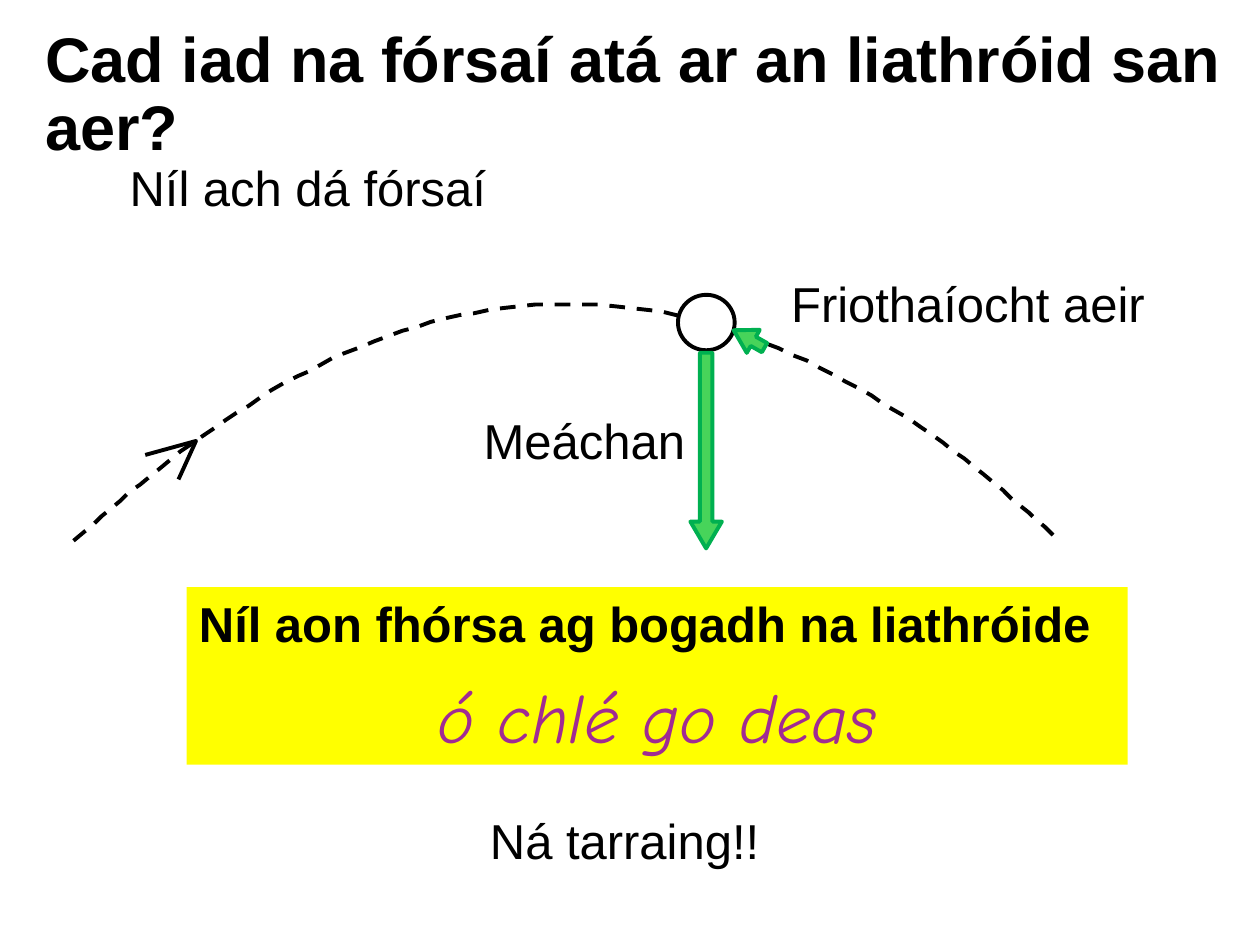
from dataclasses import dataclass

from pptx import Presentation
from pptx.dml.color import RGBColor
from pptx.enum.dml import MSO_LINE
from pptx.enum.shapes import MSO_SHAPE
from pptx.enum.text import MSO_ANCHOR, PP_ALIGN
from pptx.util import Pt

BLACK = RGBColor(0x00, 0x00, 0x00)
WHITE = RGBColor(0xFF, 0xFF, 0xFF)
YELLOW = RGBColor(0xFF, 0xFF, 0x00)
PURPLE = RGBColor(0xA0, 0x2B, 0x93)
GREEN = RGBColor(0x47, 0xD4, 0x5A)
DARK_GREEN = RGBColor(0x00, 0xB0, 0x50)
LINE_WIDTH = Pt(2.25)
CURVE_STEPS = 40

Point = tuple[float, float]


@dataclass
class Box:
    left: float
    top: float
    width: float
    height: float

    def place(self):
        return Pt(self.left), Pt(self.top), Pt(self.width), Pt(self.height)


@dataclass
class Label:
    text: str
    box: Box


@dataclass
class Force:
    box: Box
    rotation: float


LABELS = [
    Label("Meáchan", Box(269.3, 231.1, 131, 41.2)),
    Label("Friothaíocht aeir", Box(445, 152.6, 219.6, 41.2)),
    Label("Níl ach dá fórsaí", Box(67, 86.4, 220.3, 41.2)),
    Label("Ná tarraing!!", Box(272.9, 459.4, 179.3, 41.2)),
]
FORCES = [
    Force(Box(394.5, 201.6, 18, 111.8), 0),
    Force(Box(420.5, 183.6, 15.1, 20.2), 119.5),
]
FLIGHT = [
    ((42.5, 308.9), (108.7, 249.8), (202.3, 174.2), (324, 173.5)),
    ((324, 173.5), (445, 172.1), (554.4, 259.2), (604.8, 313.9)),
]
FLIGHT_END = (604.8, 309.2)
DIRECTION = [(82.8, 260), (112, 251.6), (101.5, 273.6)]


def style_font(p, size: float, color=BLACK, name="Arial", bold=False, italic=False):
    for r in p.runs:
        r.font.name = name
        r.font.size = Pt(size)
        r.font.color.rgb = color
        r.font.bold = bold
        r.font.italic = italic


def cubic(a: Point, b: Point, c: Point, d: Point, t: float) -> Point:
    u = 1 - t
    return tuple(
        u**3 * p0 + 3 * u * u * t * p1 + 3 * u * t * t * p2 + t**3 * p3
        for p0, p1, p2, p3 in zip(a, b, c, d)
    )


def add_path(slide, points: list[Point], dashed=False):
    fb = slide.shapes.build_freeform(*points[0], scale=12700)
    fb.add_line_segments(points[1:], close=False)
    sp = fb.convert_to_shape()
    sp.shadow.inherit = False
    sp.fill.background()
    sp.line.color.rgb = BLACK
    sp.line.width = LINE_WIDTH
    if dashed:
        sp.line.dash_style = MSO_LINE.DASH


def add_solid(slide, kind, box: Box, fill: RGBColor, line=None):
    sp = slide.shapes.add_shape(kind, *box.place())
    sp.shadow.inherit = False
    sp.fill.solid()
    sp.fill.fore_color.rgb = fill
    if line is None:
        sp.line.fill.background()
    else:
        sp.line.color.rgb = line
        sp.line.width = LINE_WIDTH
    return sp


def add_title(slide, text: str, box: Box):
    sp = slide.shapes.title
    sp.left, sp.top, sp.width, sp.height = box.place()
    tf = sp.text_frame
    tf.text = text
    tf.word_wrap = True
    tf.vertical_anchor = MSO_ANCHOR.MIDDLE
    p = tf.paragraphs[0]
    p.alignment = PP_ALIGN.LEFT
    p.line_spacing = 0.9
    style_font(p, 36, bold=True)


def add_force(slide, force: Force):
    sp = add_solid(slide, MSO_SHAPE.DOWN_ARROW, force.box, GREEN, DARK_GREEN)
    sp.adjustments[0] = 0.4
    sp.adjustments[1] = 0.85
    sp.rotation = force.rotation


def add_label(slide, label: Label):
    tf = slide.shapes.add_textbox(*label.box.place()).text_frame
    tf.word_wrap = True
    tf.text = label.text
    p = tf.paragraphs[0]
    p.space_after = Pt(12)
    style_font(p, 28)


def add_conclusion(slide, box: Box):
    tf = add_solid(slide, MSO_SHAPE.RECTANGLE, box, YELLOW).text_frame
    tf.word_wrap = True
    tf.vertical_anchor = MSO_ANCHOR.TOP
    tf.text = "Níl aon fhórsa ag bogadh na liathróide\nó chlé go deas"
    first, second = tf.paragraphs
    first.alignment = PP_ALIGN.LEFT
    second.alignment = PP_ALIGN.CENTER
    for p in tf.paragraphs:
        p.space_after = Pt(12)
    style_font(first, 28, bold=True)
    style_font(second, 40, PURPLE, "Comic Neue", italic=True)


def main():
    prs = Presentation()
    prs.slide_width, prs.slide_height = Pt(720), Pt(540)
    s = prs.slides.add_slide(prs.slide_layouts[5])
    add_title(s, "Cad iad na fórsaí atá ar an liathróid san aer?", Box(18.7, 12.2, 687, 85.7))
    rise, fall = FLIGHT
    curves = [rise, (*fall[:3], FLIGHT_END)]
    flight = [cubic(*c, i / CURVE_STEPS) for c in curves for i in range(CURVE_STEPS + 1)]
    add_path(s, flight, dashed=True)
    add_solid(s, MSO_SHAPE.OVAL, Box(387.4, 168.5, 32.4, 31.7), WHITE, BLACK)
    for force in FORCES:
        add_force(s, force)
    add_conclusion(s, Box(106.6, 335.5, 537.8, 101.5))
    add_path(s, DIRECTION)
    for label in LABELS:
        add_label(s, label)
    prs.save("out.pptx")


if __name__ == "__main__":
    main()
